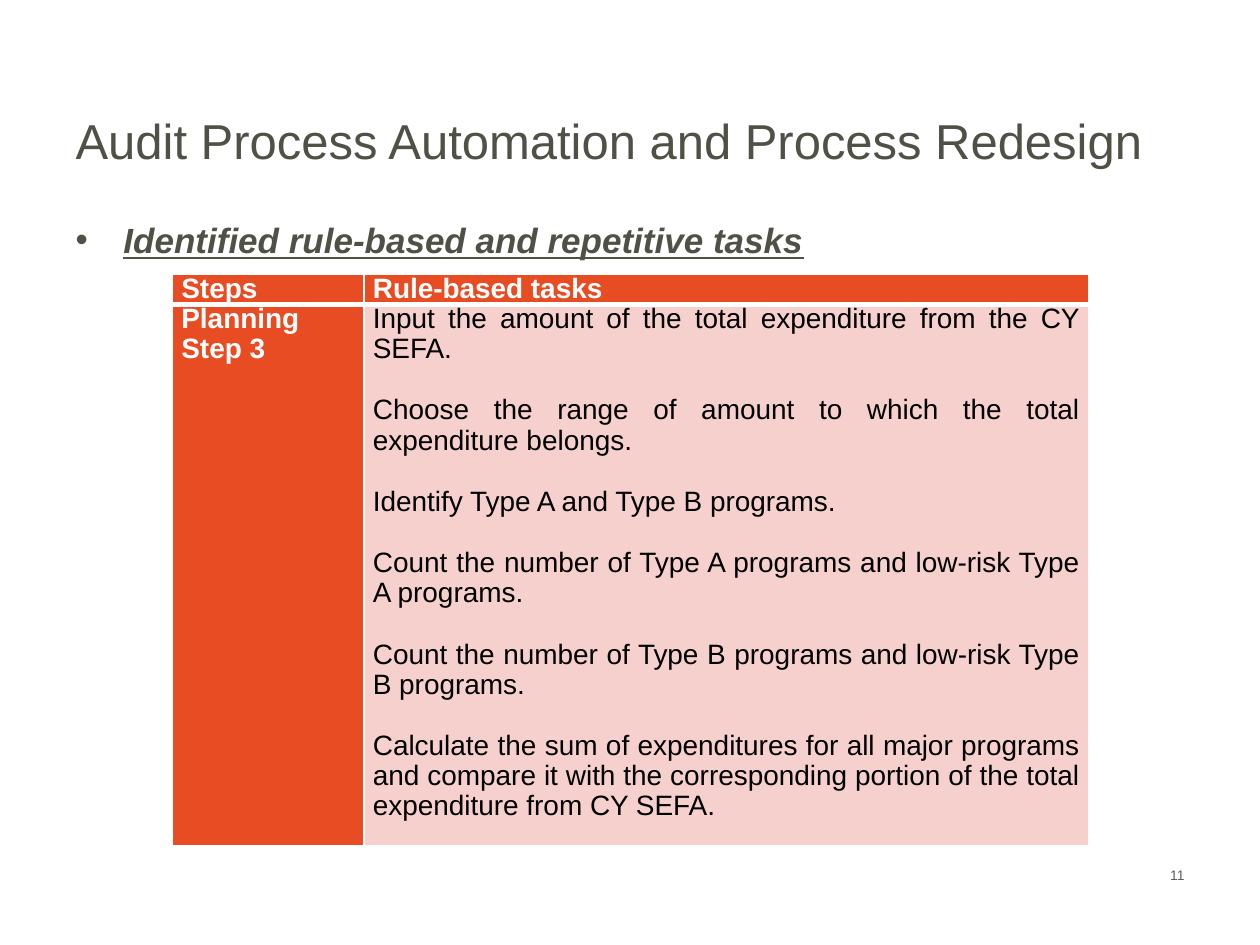
from dataclasses import dataclass
from typing import Any

from lxml.etree import SubElement
from pptx import Presentation
from pptx.dml.color import RGBColor
from pptx.enum.text import MSO_ANCHOR, PP_ALIGN
from pptx.oxml.ns import qn
from pptx.util import Inches, Pt

WIDE, HIGH = 10, 7.5
FONT = "Arial"
INK, GRAY, WHITE, BLACK = "505046", "5F5F5F", "FFFFFF", "000000"
RED, PINK = "E84C22", "F6D0CD"
LINE = 17.8  # height of one table line in points


@dataclass
class Cell:
    lines: list[str]
    fill: str = RED
    color: str = WHITE
    bold: bool = True


TASKS = [
    "Input the amount of the total expenditure from the CY SEFA.",
    "Choose the range of amount to which the total expenditure belongs.",
    "Identify Type A and Type B programs.",
    "Count the number of Type A programs and low-risk Type A programs.",
    "Count the number of Type B programs and low-risk Type B programs.",
    "Calculate the sum of expenditures for all major programs and compare it "
    "with the corresponding portion of the total expenditure from CY SEFA.",
]
ROWS = [
    [Cell(["Steps"]), Cell(["Rule-based tasks"])],
    [Cell(["Planning Step 3"]), Cell(TASKS, PINK, BLACK, False)],
]
COLS, TALL = (1.52, 5.75), (0.24, 4.3)


def rgb(code: str) -> RGBColor:
    return RGBColor.from_string(code)


def place(shape: Any, left: float, top: float, width: float, height: float) -> None:
    """Set the box of a shape in shares of the slide's size."""
    shape.left, shape.width = Inches(left * WIDE), Inches(width * WIDE)
    shape.top, shape.height = Inches(top * HIGH), Inches(height * HIGH)


def write(frame: Any, lines: list[str], size: float, color: str, align: Any = PP_ALIGN.LEFT,
          bold: bool = False, italic: bool = False, under: bool = False,
          pitch: float = 1.0, gap: float = 0, bullet: float = 0) -> None:
    for n, line in enumerate(lines):
        para = frame.add_paragraph() if n else frame.paragraphs[0]
        para.alignment, para.line_spacing = align, pitch
        para.space_before, para.space_after = Pt(gap if n else 0), Pt(0)
        if bullet:
            props = para._p.get_or_add_pPr()
            props.set("marL", str(Inches(bullet)))
            props.set("indent", str(-Inches(bullet)))
            SubElement(props, qn("a:buFont")).set("typeface", FONT)
            SubElement(props, qn("a:buChar")).set("char", "•")
        run = para.add_run()
        run.text = line
        font = run.font
        font.name, font.size, font.color.rgb = FONT, Pt(size), rgb(color)
        font.bold, font.italic, font.underline = bold, italic, under


def edge(cell: Any, **widths: float) -> None:
    """Draw white borders; keys are the sides L, R, T and B."""
    props = cell._tc.get_or_add_tcPr()
    for n, (side, width) in enumerate(widths.items()):
        line = props.makeelement(qn("a:ln" + side), {"w": str(Pt(width))})
        SubElement(SubElement(line, qn("a:solidFill")), qn("a:srgbClr")).set("val", WHITE)
        props.insert(n, line)


def grid(slide: Any, left: float, top: float) -> None:
    table = slide.shapes.add_table(
        len(TALL), len(COLS), Inches(left * WIDE), Inches(top * HIGH),
        Inches(sum(COLS)), Inches(sum(TALL))).table
    for col, width in zip(table.columns, COLS):
        col.width = Inches(width)
    for r, (row, height) in enumerate(zip(ROWS, TALL)):
        table.rows[r].height = Inches(height)
        for c, data in enumerate(row):
            cell = table.cell(r, c)
            cell.margin_left = cell.margin_right = Inches(0.07)
            cell.margin_top = cell.margin_bottom = 0
            cell.fill.solid()
            cell.fill.fore_color.rgb = rgb(data.fill)
            edge(cell, L=1, R=1, T=3 if r else 1, B=1 if r else 3)
            write(cell.text_frame, data.lines, 16, data.color, PP_ALIGN.JUSTIFY,
                  bold=data.bold, pitch=0.97, gap=LINE)


def main() -> None:
    deck = Presentation()
    deck.slide_width, deck.slide_height = Inches(WIDE), Inches(HIGH)
    slide = deck.slides.add_slide(deck.slide_layouts[1])

    title, body = slide.placeholders
    place(title, 0.05, 0.09, 0.9, 0.117)
    title.text_frame.vertical_anchor = MSO_ANCHOR.MIDDLE
    write(title.text_frame, ["Audit Process Automation and Process Redesign"], 28, INK)

    grid(slide, 0.137, 0.29)

    page = slide.shapes.add_textbox(0, 0, 0, 0)
    place(page, 0.717, 0.911, 0.233, 0.069)
    page.text_frame.word_wrap = True
    write(page.text_frame, ["11"], 7.9, GRAY, PP_ALIGN.RIGHT)

    place(body, 0.05, 0.225, 0.601, 0.059)
    body.text_frame.word_wrap = False
    write(body.text_frame, ["Identified rule-based and repetitive tasks"], 20, INK,
          bold=True, italic=True, under=True, bullet=0.38)

    deck.save("out.pptx")


if __name__ == "__main__":
    main()
